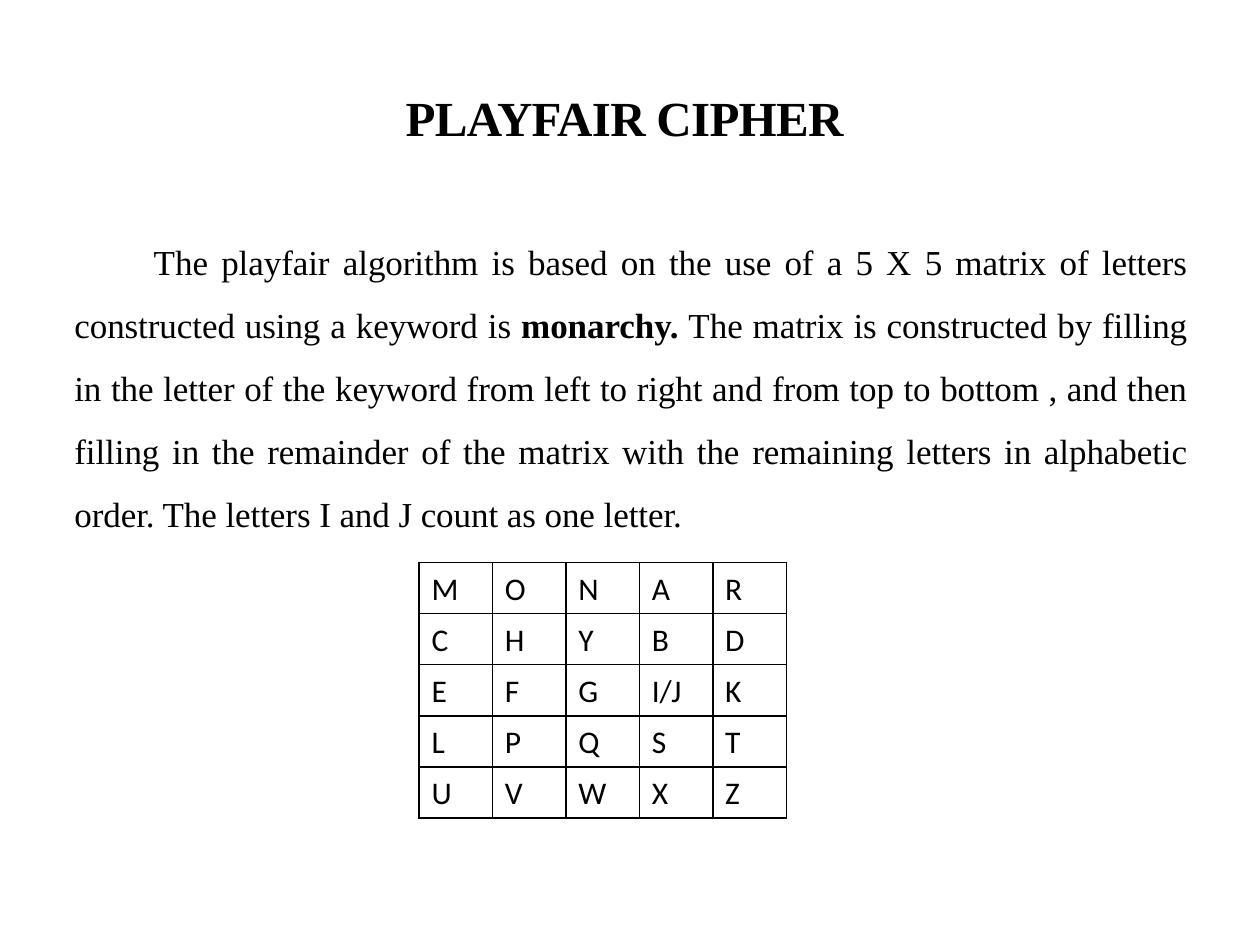
from pptx import Presentation
from pptx.dml.color import RGBColor
from pptx.enum.text import PP_ALIGN
from pptx.oxml import parse_xml
from pptx.oxml.ns import nsdecls
from pptx.util import Cm, Pt

# Content: runs are (text, bold)
TITLE = [("PLAYFAIR CIPHER", True)]
BODY = [
    ("The playfair algorithm is based on the use of a 5 X 5 matrix of letters "
     "constructed using a keyword is ", False),
    ("monarchy. ", True),
    ("The matrix is constructed by filling in the letter of the keyword from "
     "left to right and from top to bottom , and then filling in the remainder "
     "of the matrix with the remaining letters in alphabetic order. The letters "
     "I and J count as one letter.", False),
]
MATRIX = [
    ["M", "O", "N", "A", "R"],
    ["C", "H", "Y", "B", "D"],
    ["E", "F", "G", "I/J", "K"],
    ["L", "P", "Q", "S", "T"],
    ["U", "V", "W", "X", "Z"],
]

THEME = {
    "ink": "000000",
    "serif": "Times New Roman", "sans": "Calibri",
    "title": 28, "body": 20, "cell": 18, "rule": 1,
}


def style(para, face, size):
    font = para.font
    font.name, font.size = THEME[face], Pt(THEME[size])
    font.color.rgb = RGBColor.from_string(THEME["ink"])


def add_text(slide, box, runs, size, track):
    """Place a text box; track is letter spacing in hundredths of a point."""
    frame = slide.shapes.add_textbox(*map(Cm, box)).text_frame
    frame.word_wrap = True
    frame.margin_left = frame.margin_right = frame.margin_bottom = 0
    frame.margin_top = Cm(0.06)
    para = frame.paragraphs[0]
    for text, bold in runs:
        run = para.add_run()
        run.text, run.font.bold = text, bold
        run.font._element.set("spc", str(track))
    style(para, "serif", size)
    return para


def add_rules(cell):
    props = cell._tc.get_or_add_tcPr()
    for i, side in enumerate(("lnL", "lnR", "lnT", "lnB")):
        props.insert(i, parse_xml(
            f'<a:{side} {nsdecls("a")} w="{Pt(THEME["rule"])}"><a:solidFill>'
            f'<a:srgbClr val="{THEME["ink"]}"/></a:solidFill></a:{side}>'))


def add_grid(slide, left, top, wide, high, rows):
    count = len(rows[0])
    table = slide.shapes.add_table(
        len(rows), count, Cm(left), Cm(top),
        Cm(wide * count), Cm(high * len(rows))).table
    table.first_row = table.horz_banding = False
    for col in table.columns:
        col.width = Cm(wide)
    for row, texts in zip(table.rows, rows):
        row.height = Cm(high)
        for cell, text in zip(row.cells, texts):
            cell.text = text
            cell.margin_left, cell.margin_top = Cm(0.25), Cm(0.16)
            cell.margin_right = cell.margin_bottom = 0
            cell.fill.background()
            add_rules(cell)
            style(cell.text_frame.paragraphs[0], "sans", "cell")


def main():
    deck = Presentation()
    deck.slide_width, deck.slide_height = Cm(25.4), Cm(19.05)
    slide = deck.slides.add_slide(deck.slide_layouts[6])

    # Title
    add_text(slide, (8.18, 1.7, 9.09, 1.25), TITLE, "title", -40)

    # Explanation, justified with an indented first line
    para = add_text(slide, (1.5, 4.37, 22.43, 6.43), BODY, "body", -6)
    para.alignment = PP_ALIGN.JUSTIFY
    para.line_spacing = 1.5
    para._p.get_or_add_pPr().set("indent", str(Cm(1.6)))

    # Key matrix
    add_grid(slide, 8.45, 11.34, 1.48, 1.03, MATRIX)

    deck.save("out.pptx")


if __name__ == "__main__":
    main()
